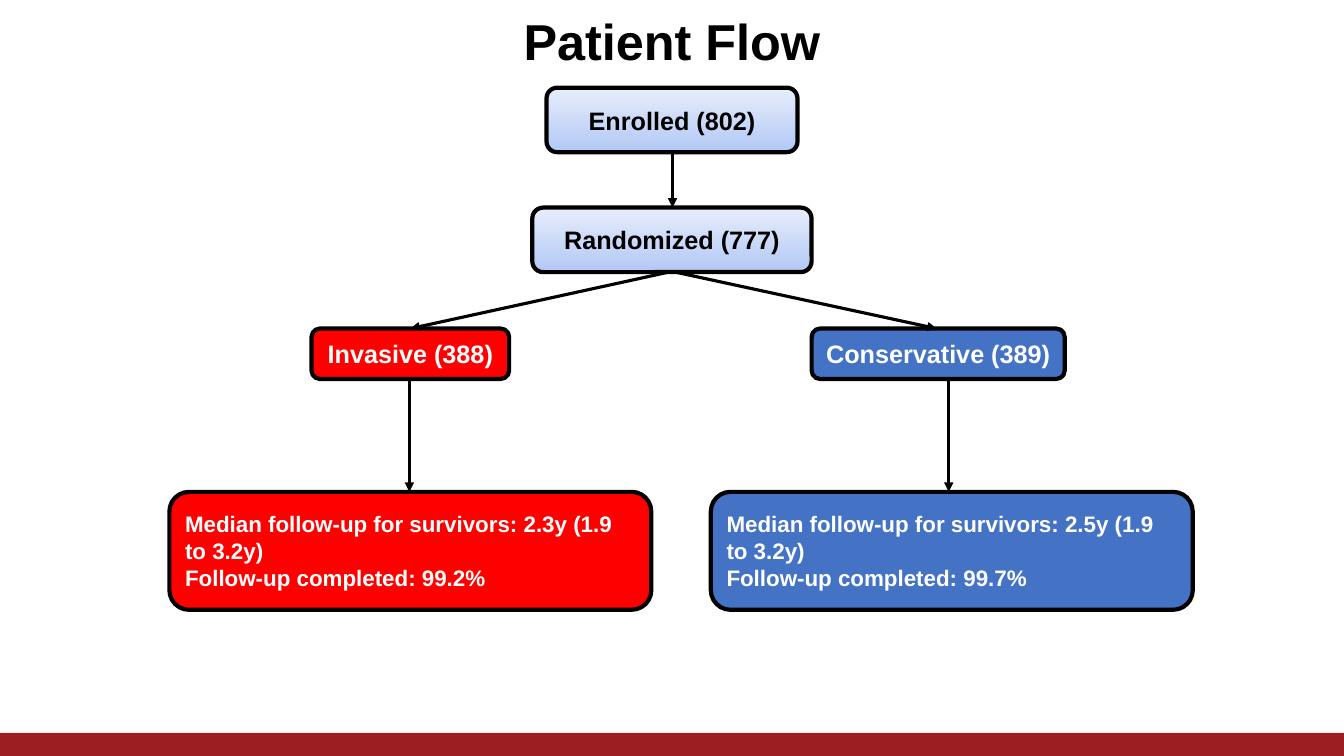
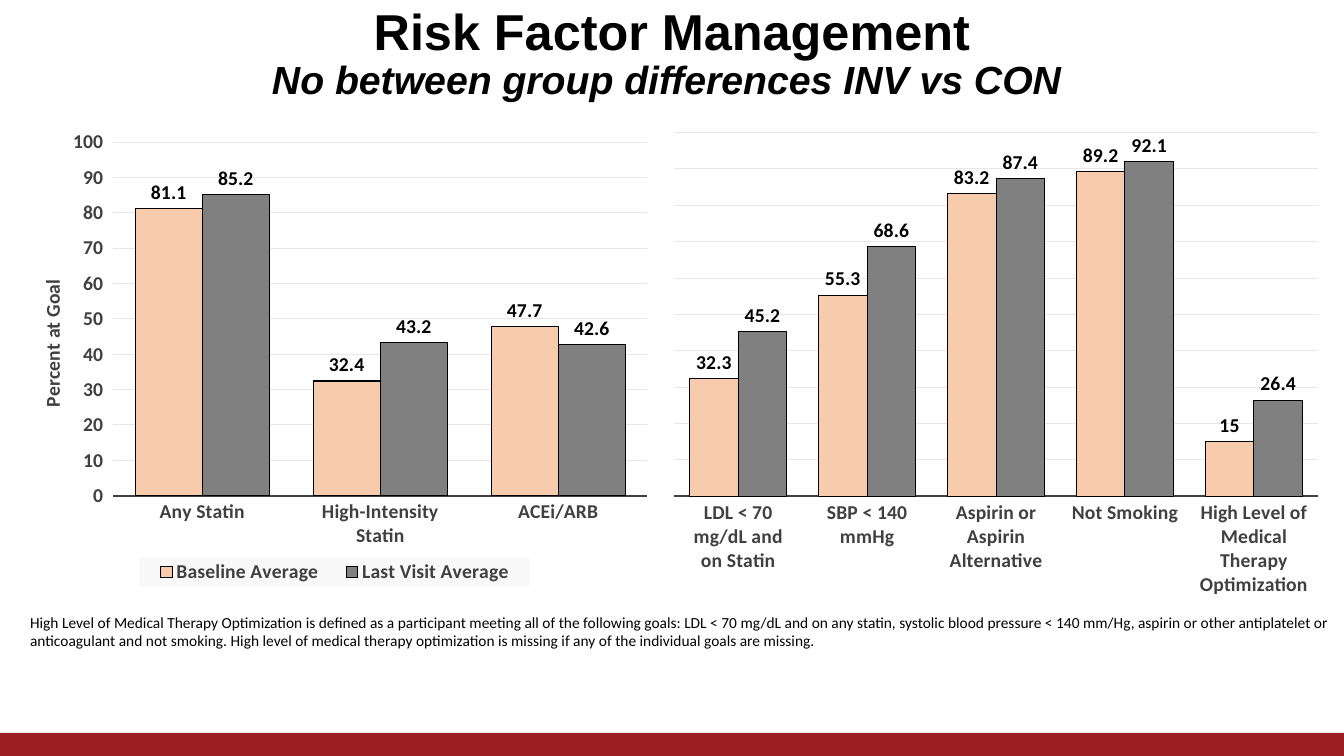
from pptx import Presentation
from pptx.chart.data import CategoryChartData
from pptx.dml.color import RGBColor
from pptx.enum.chart import XL_CHART_TYPE as ChartType, XL_LABEL_POSITION as LabelPosition
from pptx.enum.chart import XL_LEGEND_POSITION as LegendPosition, XL_TICK_MARK as TickMark
from pptx.enum.shapes import MSO_CONNECTOR as Connector, MSO_SHAPE as Shape
from pptx.enum.text import MSO_ANCHOR as Anchor, MSO_AUTO_SIZE as AutoSize, PP_ALIGN as Align
from pptx.oxml import parse_xml
from pptx.oxml.ns import nsdecls, qn
from pptx.util import Inches, Pt

COLORS = {
    "black": "000000", "white": "FFFFFF", "band": "9D1E22",
    "red": "FF0000", "blue": "4472C4", "pale_low": "B2C8F5", "pale_high": "E7EDFB",
    "baseline": "F8CBAD", "last_visit": "808080", "axis": "404040",
    "grid": "E7E7E7", "legend": "F9F9F9",
}


def rgb(name):
    return RGBColor.from_string(COLORS[name])


def style_font(font, size=14, name="Calibri", color="black", bold=True, italic=False):
    font.size, font.name, font.bold, font.italic = Pt(size), name, bold, italic
    font.color.rgb = rgb(color)


def write(paragraph, text, align=Align.LEFT, **style):
    paragraph.alignment = align
    run = paragraph.add_run()
    run.text = text
    style_font(run.font, **style)


def outline(line, color, width):
    line.color.rgb = rgb(color)
    line.width = Pt(width)


def place(element, index, **fractions):
    for layout in element.findall(qn("c:layout")):
        element.remove(layout)
    modes = "".join(f'<c:{key}Mode val="edge"/>' for key in "xy")
    values = "".join(f'<c:{key} val="{value}"/>' for key, value in fractions.items())
    target = '<c:layoutTarget val="inner"/>' if element.tag == qn("c:plotArea") else ""
    element.insert(index, parse_xml(
        f'<c:layout {nsdecls("c")}><c:manualLayout>{target}{modes}{values}'
        "</c:manualLayout></c:layout>"))


class Deck:
    def __init__(self):
        self.presentation = Presentation()
        self.presentation.slide_width = Inches(13.33)
        self.presentation.slide_height = Inches(7.5)
        self.layout = self.presentation.slide_layouts[5]
        self.slide = None

    def new_slide(self, title, box, subtitle=None):
        first = self.slide is None
        self.slide = self.presentation.slides.add_slide(self.layout)
        if first:
            self.footer_band()
        shape = self.slide.shapes.title
        shape.left, shape.top, shape.width, shape.height = map(Inches, box)
        frame = shape.text_frame
        frame.word_wrap, frame.auto_size = True, AutoSize.NONE
        frame.vertical_anchor = Anchor.MIDDLE
        paragraph = frame.paragraphs[0]
        paragraph.line_spacing = 0.9
        write(paragraph, title, align=Align.CENTER, size=36, name="Arial")
        if subtitle:
            paragraph.add_line_break()
            write(paragraph, subtitle, align=Align.CENTER, size=28, name="Arial", italic=True)

    def shape(self, kind, box, fill):
        shape = self.slide.shapes.add_shape(kind, *map(Inches, box))
        shape.shadow.inherit = False
        if fill == "pale":
            shape.fill.gradient()
            shape.fill.gradient_angle = 90
            for stop, color in zip(shape.fill.gradient_stops, ("pale_low", "pale_high")):
                stop.color.rgb = rgb(color)
        else:
            shape.fill.solid()
            shape.fill.fore_color.rgb = rgb(fill)
        return shape

    def footer_band(self):
        band = self.shape(Shape.RECTANGLE, (0, 7.27, 13.33, 0.23), "band")
        band.line.fill.background()
        band.element.nvSpPr.cNvPr.id = 20
        self.layout.shapes.element.append(band.element)

    def flow_box(self, box, lines, fill, align=Align.CENTER, size=18):
        shape = self.shape(Shape.ROUNDED_RECTANGLE, box, fill)
        outline(shape.line, "black", 3)
        frame = shape.text_frame
        frame.word_wrap, frame.vertical_anchor = True, Anchor.MIDDLE
        color = "black" if fill == "pale" else "white"
        for index, text in enumerate(lines):
            paragraph = frame.add_paragraph() if index else frame.paragraphs[0]
            write(paragraph, text, align=align, size=size, name="Arial", color=color)

    def arrow(self, start, end):
        connector = self.slide.shapes.add_connector(
            Connector.STRAIGHT, *map(Inches, start + end))
        outline(connector.line, "black", 2.25)
        connector.line._get_or_add_ln().append(
            parse_xml(f'<a:tailEnd {nsdecls("a")} type="triangle"/>'))
        connector.element.spPr.append(parse_xml(f'<a:effectLst {nsdecls("a")}/>'))

    def note(self, box, text):
        frame = self.slide.shapes.add_textbox(*map(Inches, box)).text_frame
        frame.word_wrap, frame.margin_right = True, 0
        write(frame.paragraphs[0], text, size=11, bold=False)

    def column_chart(self, box, categories, series, plot):
        data = CategoryChartData()
        data.categories = categories
        for name, values in series:
            data.add_series(name, values)
        chart = self.slide.shapes.add_chart(
            ChartType.COLUMN_CLUSTERED, *map(Inches, box), data).chart
        style_font(chart.font)
        chart.has_title = chart.has_legend = False
        columns = chart.plots[0]
        columns.gap_width, columns.overlap, columns.vary_by_categories = 65, 0, False
        looks = (("baseline", "General"), ("last_visit", "0.0"))
        for bars, (color, number_format) in zip(columns.series, looks):
            bars.format.fill.solid()
            bars.format.fill.fore_color.rgb = rgb(color)
            outline(bars.format.line, "black", 0.75)
            labels = bars.data_labels
            labels.show_value, labels.position = True, LabelPosition.OUTSIDE_END
            labels.number_format, labels.number_format_is_linked = number_format, False
            style_font(labels.font)
        category_axis, value_axis = chart.category_axis, chart.value_axis
        category_axis.major_tick_mark = TickMark.NONE
        outline(category_axis.format.line, "axis", 1.5)
        value_axis.minimum_scale, value_axis.maximum_scale = 0, 100
        value_axis.major_unit = 10
        value_axis.format.line.fill.background()
        outline(value_axis.major_gridlines.format.line, "grid", 0.75)
        for axis in (category_axis, value_axis):
            style_font(axis.tick_labels.font, color="axis")
        place(chart.element.find(".//" + qn("c:plotArea")), 0, **plot)
        return chart

    def axis_title(self, chart, text, **position):
        title = chart.value_axis.axis_title
        write(title.text_frame.paragraphs[0], text, align=Align.CENTER, color="axis")
        body = title.element.find(".//" + qn("a:bodyPr"))
        body.set("rot", "-5400000")
        body.set("vert", "horz")
        place(title.element, 1, **position)

    def legend(self, chart, **position):
        chart.has_legend = True
        chart.legend.position = LegendPosition.BOTTOM
        chart.legend.include_in_layout = False
        style_font(chart.legend.font, color="axis")
        element = chart.element.find(".//" + qn("c:legend"))
        place(element, 1, **position)
        element.find(qn("c:txPr")).addprevious(parse_xml(
            f'<c:spPr {nsdecls("c", "a")}><a:solidFill>'
            f'<a:srgbClr val="{COLORS["legend"]}"/></a:solidFill></c:spPr>'))


def patient_flow(deck):
    deck.new_slide("Patient Flow", (0.51, 0.1, 12.31, 0.68))
    deck.flow_box((5.42, 0.87, 2.49, 0.64), ["Enrolled (802)"], "pale")
    deck.flow_box((5.28, 2.06, 2.77, 0.64), ["Randomized (777)"], "pale")
    deck.arrow((6.67, 1.51), (6.67, 2.06))
    arms = (
        ("Invasive (388)", "red", 3.09, 1.96, 1.68, "2.3y", "99.2%", 4.06, 6.63, 4.07),
        ("Conservative (389)", "blue", 8.05, 2.51, 7.05, "2.5y", "99.7%", 9.41, 6.7, 9.29),
    )
    for name, fill, left, width, result_left, median, completed, down, start, end in arms:
        deck.flow_box((left, 3.26, width, 0.5), [name], fill)
        deck.flow_box(
            (result_left, 4.88, 4.78, 1.17),
            [f"Median follow-up for survivors: {median} (1.9 to 3.2y)",
             f"Follow-up completed: {completed}"],
            fill, align=Align.LEFT, size=16)
        deck.arrow((down, 3.76), (down, 4.88))
        deck.arrow((start, 2.7), (end, 3.26))


def risk_factors(deck):
    deck.new_slide("Risk Factor Management", (0.46, 0.01, 12.41, 1.07),
                   "No between group differences INV vs CON ")
    deck.note(
        (0.2, 6.03, 13.13, 0.63),
        "High Level of Medical Therapy Optimization is defined as a participant meeting all "
        "of the following goals: LDL < 70 mg/dL and on any statin, systolic blood pressure "
        "< 140 mm/Hg, aspirin or other antiplatelet or anticoagulant and not smoking. High "
        "level of medical therapy optimization is missing if any of the individual goals "
        "are missing.")
    goals = deck.column_chart(
        (6.55, 1.22, 6.66, 4.81),
        ["LDL < 70 mg/dL and on Statin", "SBP < 140 mmHg", "Aspirin or Aspirin Alternative",
         "Not Smoking", "High Level of Medical Therapy Optimization"],
        [("Series 1", (32.3, 55.3, 83.2, 89.2, 15)),
         ("Series 2", (45.2, 68.6, 87.4, 92.1, 26.4))],
        dict(x=0.02, y=0.02, w=0.96, h=0.75))
    goals.value_axis.visible = False
    medication = deck.column_chart(
        (0.09, 1.22, 6.46, 4.74),
        ["Any Statin", "High-Intensity Statin", "ACEi/ARB"],
        [("Baseline Average", (81.1, 32.4, 47.7)),
         ("Last Visit Average", (85.2, 43.2, 42.6))],
        dict(x=0.16, y=0.04, w=0.82, h=0.74))
    medication.value_axis.major_tick_mark = TickMark.OUTSIDE
    deck.axis_title(medication, "Percent at Goal", x=0.04, y=0.32)
    deck.legend(medication, x=0.2, y=0.91, w=0.6, h=0.06)


def main():
    deck = Deck()
    patient_flow(deck)
    risk_factors(deck)
    deck.presentation.save("out.pptx")


if __name__ == "__main__":
    main()
